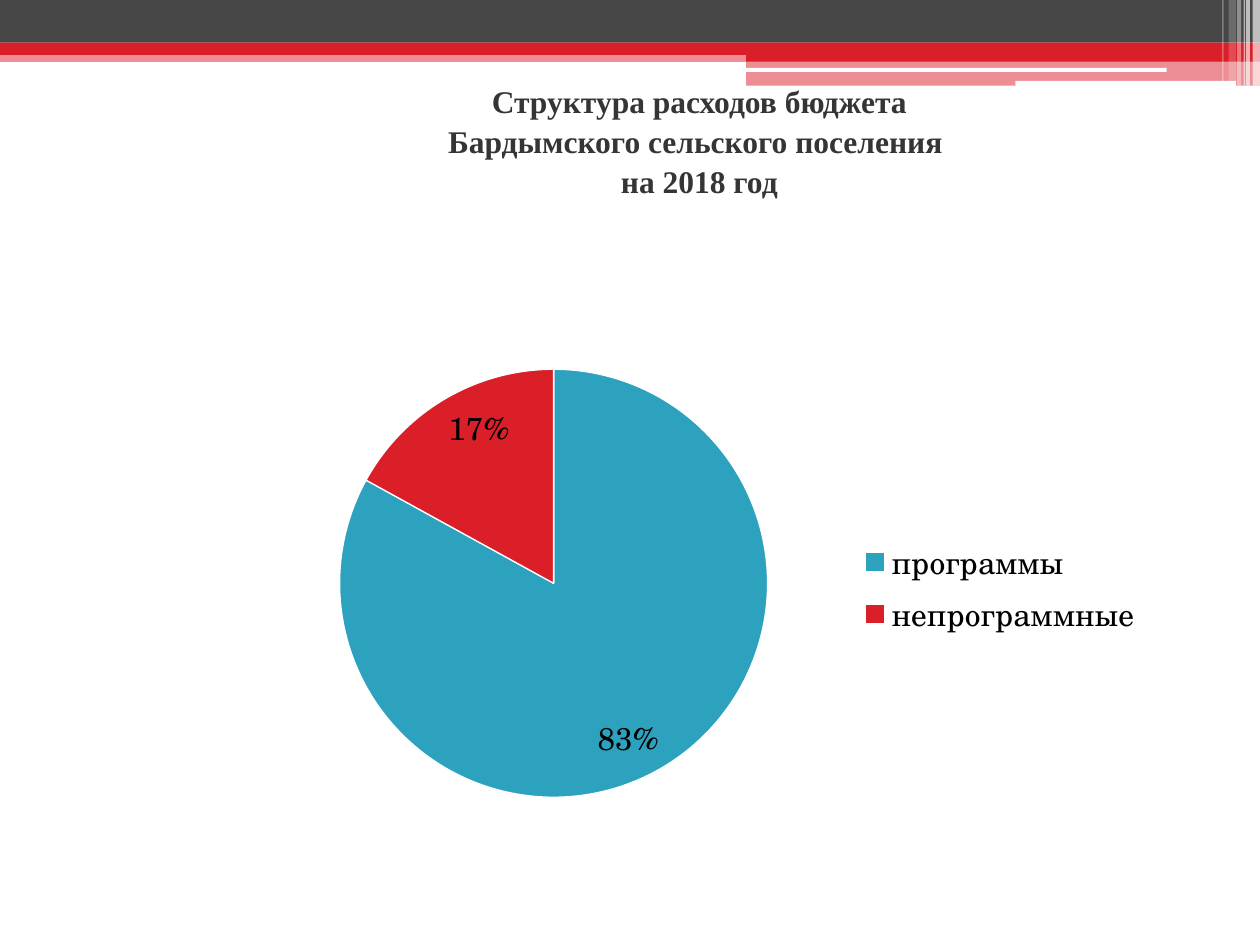
from dataclasses import dataclass

from lxml.etree import SubElement
from pptx import Presentation
from pptx.chart.data import CategoryChartData
from pptx.dml.color import RGBColor
from pptx.enum.chart import XL_CHART_TYPE, XL_LEGEND_POSITION, XL_LABEL_POSITION
from pptx.enum.shapes import MSO_SHAPE
from pptx.enum.text import MSO_ANCHOR, PP_ALIGN
from pptx.oxml.ns import qn
from pptx.util import Cm, Pt


@dataclass(frozen=True)
class Theme:
    red: RGBColor = RGBColor(0xDA, 0x1F, 0x28)
    teal: RGBColor = RGBColor(0x2D, 0xA2, 0xBF)
    dark: RGBColor = RGBColor(0x46, 0x46, 0x46)
    title: RGBColor = RGBColor(0x35, 0x35, 0x35)
    white: RGBColor = RGBColor(0xFF, 0xFF, 0xFF)
    black: RGBColor = RGBColor(0, 0, 0)
    title_font: str = "Times New Roman"
    chart_font: str = "TeX Gyre Schola"
    size: Pt = Pt(18)


THEME = Theme()
WIDTH, HEIGHT = 25.4, 19.05
TAB_LEFT = 15.04
TAB_WIDTH = WIDTH - TAB_LEFT

# Header bands: left, top, width, height, colour, opacity in percent
BANDS = [
    (0, 1.02, WIDTH, 0.23, THEME.red, 50),
    (0, 0, WIDTH, 0.86, THEME.dark, 100),
    (0, 0.86, WIDTH, 0.25, THEME.red, 100),
    (TAB_LEFT, 0.99, TAB_WIDTH, 0.25, THEME.red, 100),
    (TAB_LEFT, 1.22, TAB_WIDTH, 0.51, THEME.red, 50),
]
# Thin rounded white lines: left, top, width, height
PILLS = [(15.01, 1.37, 8.51, 0.08), (20.47, 1.63, 4.45, 0.1)]
# Vertical white stripes: left, width, height, opacity in percent
STRIPES = [
    (25.25, 0.15, 1.73, 65),
    (25.12, 0.08, 1.73, 65),
    (25.07, 0.03, 1.73, 60),
    (24.94, 0.08, 1.73, 40),
    (24.77, 0.15, 1.63, 20),
    (24.64, 0.03, 1.63, 30),
]
TITLE_LINES = [
    " Структура расходов бюджета",
    "Бардымского сельского поселения",
    " на 2018 год",
]
SLICES = [("программы", 0.83, THEME.teal), ("непрограммные", 0.17, THEME.red)]
PLOT = {"x": 0.115, "y": 0.086, "w": 0.465, "h": 0.811}


def set_all(obj, values):
    for name, value in values.items():
        setattr(obj, name, value)


def set_font(font, color, **values):
    set_all(font, {"size": THEME.size, **values})
    font.color.rgb = color


def add_block(s, left, top, width, height, color, opacity=100,
              kind=MSO_SHAPE.RECTANGLE):
    sp = s.shapes.add_shape(kind, Cm(left), Cm(top), Cm(width), Cm(height))
    sp.shadow.inherit = False
    sp.line.fill.background()
    sp.fill.solid()
    sp.fill.fore_color.rgb = color
    if opacity < 100:
        clr = sp.fill._xPr.find(f"{qn('a:solidFill')}/{qn('a:srgbClr')}")
        SubElement(clr, qn("a:alpha"), val=str(opacity * 1000))


def add_header(s):
    for band in BANDS:
        add_block(s, *band)
    for pill in PILLS:
        add_block(s, *pill, THEME.white, kind=MSO_SHAPE.ROUNDED_RECTANGLE)
    for left, width, height, opacity in STRIPES:
        add_block(s, left, 0, width, height, THEME.white, opacity)


def add_title(s):
    tf = s.shapes.add_textbox(Cm(3.91), Cm(1.12), Cm(20.22), Cm(3.4)).text_frame
    set_all(tf, {"word_wrap": True, "vertical_anchor": MSO_ANCHOR.MIDDLE})
    p = tf.paragraphs[0]
    set_all(p, {"alignment": PP_ALIGN.CENTER, "line_spacing": 1.05})
    for i, line in enumerate(TITLE_LINES):
        if i:
            p.add_line_break()
        r = p.add_run()
        r.text = line
        set_font(r.font, THEME.title, name=THEME.title_font, bold=True)


def set_plot_layout(chart):
    area = chart._chartSpace.chart.plotArea
    layout = area.find(qn("c:layout"))
    if layout is None:
        layout = area.makeelement(qn("c:layout"))
        area.insert(0, layout)
    manual = SubElement(layout, qn("c:manualLayout"))
    values = {"layoutTarget": "inner", "xMode": "edge", "yMode": "edge", **PLOT}
    for name, value in values.items():
        SubElement(manual, qn(f"c:{name}"), val=str(value))


def add_pie(s):
    data = CategoryChartData(number_format="0%")
    data.categories = [name for name, _, _ in SLICES]
    data.add_series("Series 1", [value for _, value, _ in SLICES])
    chart = s.shapes.add_chart(XL_CHART_TYPE.PIE, Cm(4.7), Cm(6.53),
                               Cm(18.59), Cm(10.64), data).chart
    set_all(chart, {"has_title": False, "has_legend": True})
    set_font(chart.font, THEME.black, name=THEME.chart_font)
    set_all(chart.legend, {"position": XL_LEGEND_POSITION.RIGHT,
                           "include_in_layout": False})
    set_plot_layout(chart)

    # Slices and their labels
    plot = chart.plots[0]
    set_all(plot, {"vary_by_categories": True, "has_data_labels": True})
    set_all(plot.data_labels, {
        "show_value": True,
        "show_percentage": False,
        "number_format": "0%",
        "number_format_is_linked": False,
        "position": XL_LABEL_POSITION.INSIDE_END,
    })
    for i, (_, _, color) in enumerate(SLICES):
        fmt = plot.series[0].points[i].format
        fmt.fill.solid()
        fmt.fill.fore_color.rgb = color
        fmt.line.color.rgb = THEME.white
        fmt.line.width = Pt(0.75)


def main():
    prs = Presentation()
    set_all(prs, {"slide_width": Cm(WIDTH), "slide_height": Cm(HEIGHT)})
    s = prs.slides.add_slide(prs.slide_layouts[6])
    add_header(s)
    add_title(s)
    add_pie(s)
    prs.save("out.pptx")


if __name__ == "__main__":
    main()
